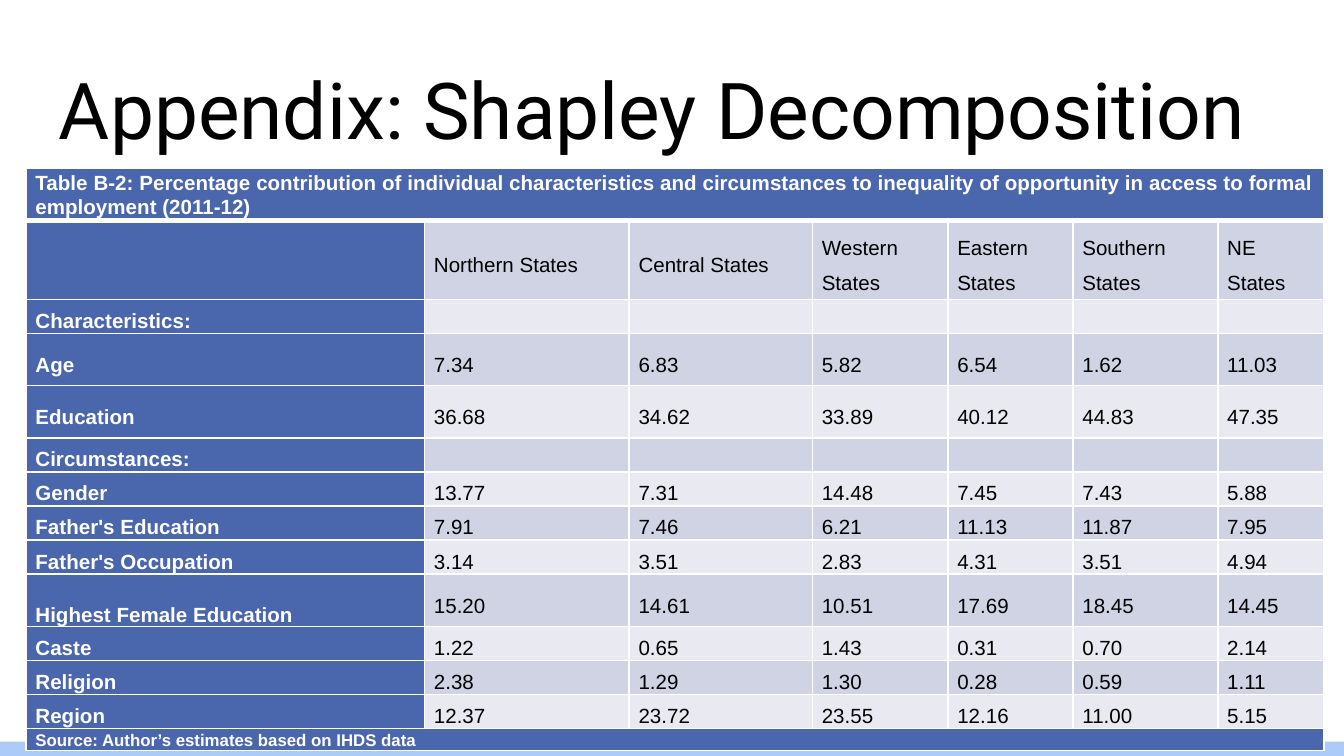
import pptx
import pptx.dml.color
import pptx.enum.shapes
import pptx.enum.text
import pptx.util
import lxml.etree
from pptx.oxml.ns import qn

Pt = pptx.util.Pt
ANCHOR = pptx.enum.text.MSO_ANCHOR
COLORS = {
    "blue": "4A66AC", "dark band": "D0D3E3", "light band": "E9EAF1",
    "footer": "ACCBF9", "white": "FFFFFF", "black": "000000",
}


def color(name):
    return pptx.dml.color.RGBColor.from_string(COLORS[name])


def fill_cell(cell, text, fill, font_color, bold=False, size=11, spacing=1.5, bottom_border=1):
    cell.margin_left = cell.margin_right = Pt(5)
    cell.margin_top = cell.margin_bottom = 0
    cell.vertical_anchor = ANCHOR.MIDDLE
    properties = cell._tc.get_or_add_tcPr()
    for side, width in (("L", 1), ("R", 1), ("T", 1), ("B", bottom_border)):
        line = lxml.etree.SubElement(properties, qn("a:ln" + side), w=str(Pt(width)))
        solid = lxml.etree.SubElement(line, qn("a:solidFill"))
        lxml.etree.SubElement(solid, qn("a:srgbClr"), val=COLORS["white"])
    cell.fill.solid()
    cell.fill.fore_color.rgb = color(fill)
    paragraph = cell.text_frame.paragraphs[0]
    paragraph.text = text
    # The paragraph end keeps the text size, so that low rows stay low
    ending = paragraph._p.get_or_add_endParaRPr()
    ending.set("sz", str(size * 100))
    lxml.etree.SubElement(ending, qn("a:latin"), typeface="Arial")
    if not text:
        return
    paragraph.alignment = pptx.enum.text.PP_ALIGN.JUSTIFY
    paragraph.line_spacing = spacing
    paragraph.space_after = Pt(8)
    paragraph.font.name = "Arial"
    paragraph.font.size = Pt(size)
    paragraph.font.bold = bold
    paragraph.font.color.rgb = color(font_color)


presentation = pptx.Presentation()
presentation.slide_width = Pt(720)
presentation.slide_height = Pt(405)
slide = presentation.slides.add_slide(presentation.slide_layouts[6])

# Footer strip
strip = slide.shapes.add_shape(
    pptx.enum.shapes.MSO_SHAPE.RECTANGLE, 0, Pt(397.3), Pt(720), Pt(7.7))
strip.shadow.inherit = False
strip.fill.solid()
strip.fill.fore_color.rgb = color("footer")
strip.line.fill.background()

# Title
title = slide.shapes.add_textbox(Pt(24.5), Pt(24.8), Pt(671), Pt(65.5))
frame = title.text_frame
frame.word_wrap = True
frame.vertical_anchor = ANCHOR.BOTTOM
frame.margin_left = frame.margin_right = frame.margin_top = frame.margin_bottom = Pt(7.2)
paragraph = frame.paragraphs[0]
paragraph.text = "Appendix: Shapley Decomposition"
paragraph.font.name = "Roboto"
paragraph.font.size = Pt(42)
paragraph.font.color.rgb = color("black")

# Table content: label, then one value per region
caption = ("Table B-2: Percentage contribution of individual characteristics and circumstances "
           "to inequality of opportunity in access to formal employment (2011-12)")
source = "Source: Author’s estimates based on IHDS data"
blank = [""] * 6
body = [
    ["", "Northern States", "Central States", "Western States",
     "Eastern States", "Southern States", "NE States"],
    ["Characteristics:", *blank],
    ["Age", "7.34", "6.83", "5.82", "6.54", "1.62", "11.03"],
    ["Education", "36.68", "34.62", "33.89", "40.12", "44.83", "47.35"],
    ["Circumstances:", *blank],
    ["Gender", "13.77", "7.31", "14.48", "7.45", "7.43", "5.88"],
    ["Father's Education", "7.91", "7.46", "6.21", "11.13", "11.87", "7.95"],
    ["Father's Occupation", "3.14", "3.51", "2.83", "4.31", "3.51", "4.94"],
    ["Highest Female Education", "15.20", "14.61", "10.51", "17.69", "18.45", "14.45"],
    ["Caste", "1.22", "0.65", "1.43", "0.31", "0.70", "2.14"],
    ["Religion", "2.38", "1.29", "1.30", "0.28", "0.59", "1.11"],
    ["Region", "12.37", "23.72", "23.55", "12.16", "11.00", "5.15"],
]
column_widths = [213.5, 109.6, 98.2, 72.6, 67, 77.6, 56.8]
tall_rows = {"": 42.2, "Age": 27.9, "Education": 27.9, "Highest Female Education": 27.9}
row_heights = [27.4, *(tall_rows.get(row[0], 18.3) for row in body), 10.8]

# Table grid
table = slide.shapes.add_table(
    len(row_heights), len(column_widths), Pt(14), Pt(90),
    Pt(sum(column_widths)), Pt(sum(row_heights))).table
for column, width in zip(table.columns, column_widths):
    column.width = Pt(width)
for row, height in zip(table.rows, row_heights):
    row.height = Pt(height)

# Caption and source rows span the whole table
last = len(row_heights) - 1
for index, text, size, border in ((0, caption, 11, 3), (last, source, 9, 1)):
    table.cell(index, 0).merge(table.cell(index, len(column_widths) - 1))
    for position, cell in enumerate(table.rows[index].cells):
        fill_cell(cell, "" if position else text, "blue", "white", True, size, 1.07, border)

# Body rows: blue label column, banded values; low rows take an exact line height
for index, (label, *values) in enumerate(body, start=1):
    spacing = 1.5 if label in tall_rows else Pt(17.4)
    fill_cell(table.cell(index, 0), label, "blue", "white", bold=True, spacing=spacing)
    if label == "Highest Female Education":
        table.cell(index, 0).vertical_anchor = ANCHOR.BOTTOM
    band = "dark band" if index % 2 else "light band"
    for position, value in enumerate(values, start=1):
        fill_cell(table.cell(index, position), value, band, "black", spacing=spacing)

presentation.save("out.pptx")
